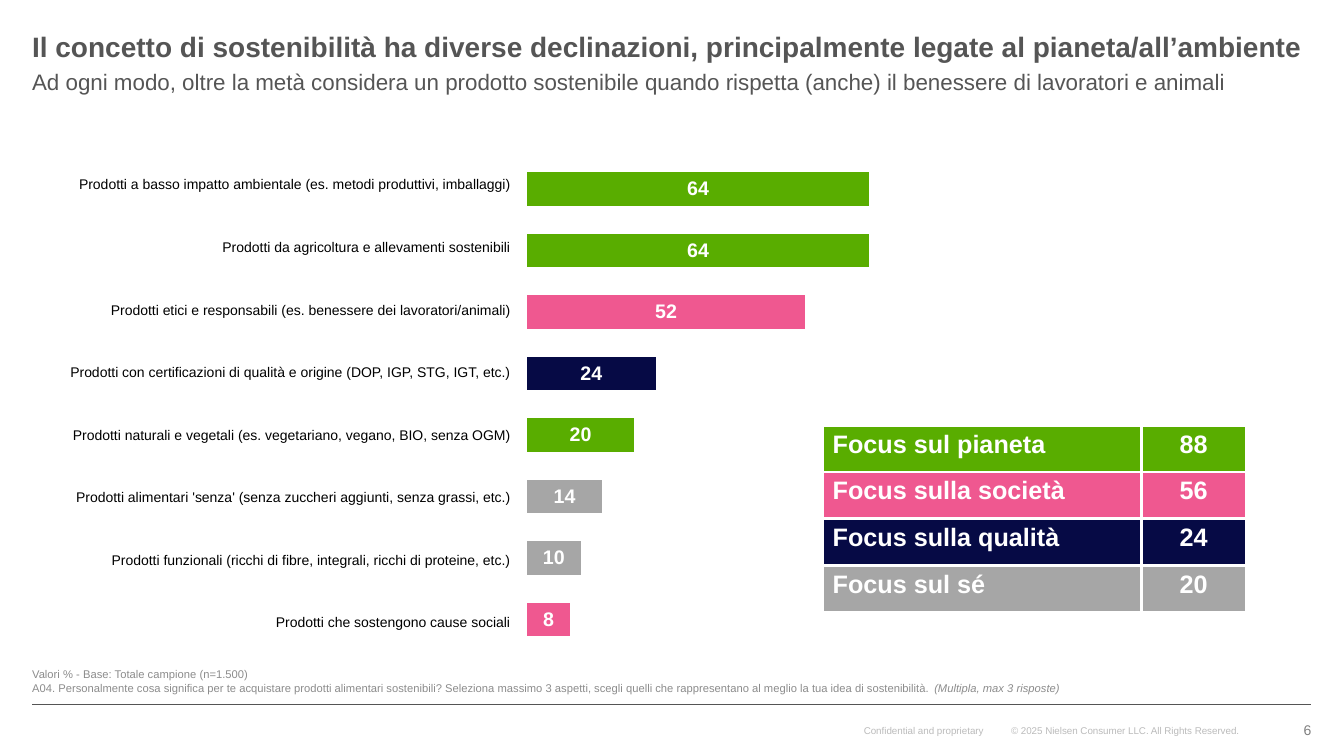
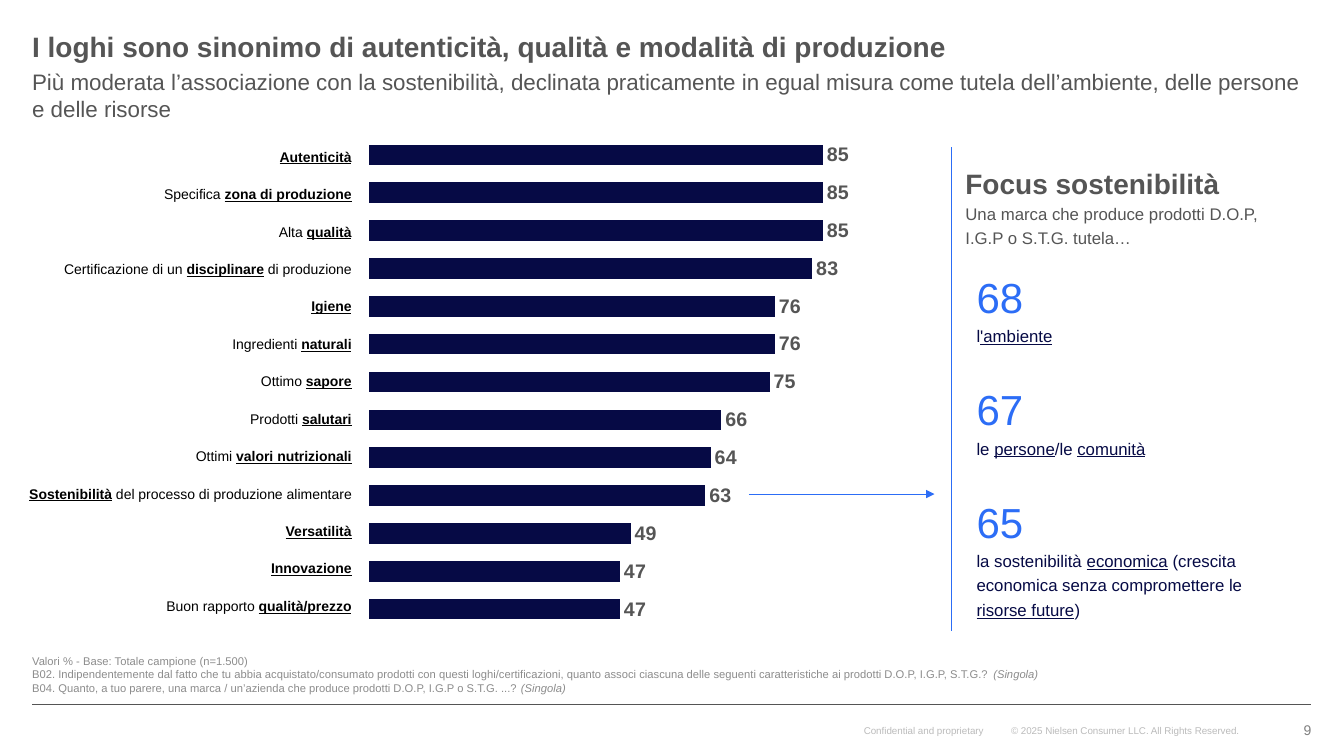
from dataclasses import dataclass
from typing import Sequence

from lxml.etree import SubElement
from pptx import Presentation
from pptx.chart.data import CategoryChartData
from pptx.dml.color import RGBColor
from pptx.enum.chart import XL_CHART_TYPE as ChartType, XL_LABEL_POSITION as LabelPosition
from pptx.enum.text import MSO_ANCHOR as Anchor, PP_ALIGN as Align
from pptx.oxml.ns import qn
from pptx.util import Cm, Pt

FONT = "Arial"
WHITE = RGBColor(0xFF, 0xFF, 0xFF)
BLACK = RGBColor(0x00, 0x00, 0x00)
DARK_GREY = RGBColor(0x55, 0x55, 0x55)
NUMBER_GREY = RGBColor(0x80, 0x80, 0x80)
NOTE_GREY = RGBColor(0x8C, 0x8C, 0x8C)
LEGAL_GREY = RGBColor(0xBB, 0xBB, 0xBB)
GREEN = RGBColor(0x59, 0xAD, 0x00)
PINK = RGBColor(0xEF, 0x58, 0x90)
NAVY = RGBColor(0x06, 0x0A, 0x45)
GREY = RGBColor(0xA6, 0xA6, 0xA6)
BLUE = RGBColor(0x2C, 0x6D, 0xF6)

LEFT, WIDTH = 0.81, 32.24
RULE_Y = 17.75
BASE_NOTE = "Valori % - Base: Totale campione (n=1.500)"


@dataclass(frozen=True)
class Area:
    """A rectangle in centimetres."""
    left: float
    top: float
    width: float
    height: float

    def lengths(self) -> tuple[Cm, Cm, Cm, Cm]:
        return Cm(self.left), Cm(self.top), Cm(self.width), Cm(self.height)


@dataclass(frozen=True)
class Line:
    """A paragraph; parts between bars get the font attributes in marks."""
    text: str
    size: float
    color: RGBColor
    bold: bool = False
    marks: tuple[str, ...] = ()
    align: Align = Align.LEFT
    spacing: float = 1.0


@dataclass(frozen=True)
class Bar:
    label: str
    value: int
    color: RGBColor = NAVY


@dataclass(frozen=True)
class Figure:
    value: str
    meaning: str


IMPACT_BARS = [
    Bar("Prodotti a basso impatto ambientale (es. metodi produttivi, imballaggi)", 64, GREEN),
    Bar("Prodotti da agricoltura e allevamenti sostenibili", 64, GREEN),
    Bar("Prodotti etici e responsabili (es. benessere dei lavoratori/animali)", 52, PINK),
    Bar("Prodotti con certificazioni di qualità e origine (DOP, IGP, STG, IGT, etc.)", 24),
    Bar("Prodotti naturali e vegetali (es. vegetariano, vegano, BIO, senza OGM)", 20, GREEN),
    Bar("Prodotti alimentari 'senza' (senza zuccheri aggiunti, senza grassi, etc.)", 14, GREY),
    Bar("Prodotti funzionali (ricchi di fibre, integrali, ricchi di proteine, etc.)", 10, GREY),
    Bar("Prodotti che sostengono cause sociali", 8, PINK),
]
FOCUS_ROWS = [
    Bar("Focus sul pianeta", 88, GREEN),
    Bar("Focus sulla società", 56, PINK),
    Bar("Focus sulla qualità", 24),
    Bar("Focus sul sé", 20, GREY),
]
LOGO_BARS = [
    Bar("|Autenticità|", 85),
    Bar("Specifica |zona di produzione|", 85),
    Bar("Alta |qualità|", 85),
    Bar("Certificazione di un |disciplinare| di produzione", 83),
    Bar("|Igiene|", 76),
    Bar("Ingredienti |naturali|", 76),
    Bar("Ottimo |sapore|", 75),
    Bar("Prodotti |salutari|", 66),
    Bar("Ottimi |valori nutrizionali|", 64),
    Bar("|Sostenibilità| del processo di produzione alimentare", 63),
    Bar("|Versatilità|", 49),
    Bar("|Innovazione|", 47),
    Bar("Buon rapporto |qualità/prezzo|", 47),
]
FIGURES = [
    Figure("68", "l|'ambiente|"),
    Figure("67", "le |persone|/le |comunità|"),
    Figure("65", "la sostenibilità |economica| (crescita economica senza "
                 "compromettere le |risorse future|)"),
]


def write(frame, lines: Sequence[Line]) -> None:
    for index, line in enumerate(lines):
        para = frame.paragraphs[0] if index == 0 else frame.add_paragraph()
        para.alignment = line.align
        para.line_spacing = line.spacing
        for position, part in enumerate(line.text.split("|")):
            if not part:
                continue
            span = para.add_run()
            span.text = part
            span.font.name = FONT
            span.font.size = Pt(line.size)
            span.font.bold = line.bold
            span.font.color.rgb = line.color
            if position % 2:
                for mark in line.marks:
                    setattr(span.font, mark, True)


def set_margins(target, left: float, top: float, right: float, bottom: float) -> None:
    target.margin_left, target.margin_right = Cm(left), Cm(right)
    target.margin_top, target.margin_bottom = Cm(top), Cm(bottom)


def add_text(page, area: Area, lines: Sequence[Line], side: float = 0, edge: float = 0,
             anchor: Anchor = Anchor.TOP) -> None:
    frame = page.shapes.add_textbox(*area.lengths()).text_frame
    frame.word_wrap = True
    frame.vertical_anchor = anchor
    set_margins(frame, side, edge, side, edge)
    write(frame, lines)


def add_line(page, start: tuple[float, float], end: tuple[float, float], color: RGBColor,
             width: float, arrow: bool = False) -> None:
    connector = page.shapes.add_connector(1, *map(Cm, start + end))
    connector.line.color.rgb = color
    connector.line.width = Pt(width)
    properties = connector._element.spPr
    if arrow:
        SubElement(properties.find(qn("a:ln")), qn("a:tailEnd"), type="triangle")
    SubElement(properties, qn("a:effectLst"))


def add_page(deck, number: int, title: str, subtitle: str, notes: Sequence[str]):
    """Adds a slide with heading, notes and footer."""
    page = deck.slides.add_slide(deck.slide_layouts[6])
    add_text(page, Area(25.48, 18.14, 6.3, 0.56),
             [Line("© 2025 Nielsen Consumer LLC. All Rights Reserved.", 7, LEGAL_GREY)], edge=0.13)
    add_text(page, Area(21.77, 18.26, 3.5, 0.3),
             [Line("Confidential and proprietary", 7, LEGAL_GREY)])
    add_line(page, (LEFT, RULE_Y), (LEFT + WIDTH, RULE_Y), DARK_GREY, 1)
    add_text(page, Area(LEFT, 0.84, WIDTH, 0.74),
             [Line(title, 20, DARK_GREY, bold=True, spacing=0.9)])
    add_text(page, Area(31.93, 18.01, 1.12, 0.79),
             [Line(str(number), 10, NUMBER_GREY, align=Align.RIGHT)], anchor=Anchor.MIDDLE)
    add_text(page, Area(LEFT, 1.6, WIDTH, 1.22), [Line(subtitle, 16, DARK_GREY)], edge=0.13)
    add_text(page, Area(LEFT, 16.3, WIDTH, 1.2),
             [Line(note, 8, NOTE_GREY, marks=("italic",)) for note in (BASE_NOTE, *notes)],
             anchor=Anchor.BOTTOM)
    return page


def fix_plot_area(chart) -> None:
    """Gives the inner plot area a fixed place in the chart."""
    plot_area = chart._chartSpace.chart.plotArea
    for old_layout in plot_area.findall(qn("c:layout")):
        plot_area.remove(old_layout)
    layout = SubElement(plot_area, qn("c:layout"))
    plot_area.insert(0, layout)
    manual = SubElement(layout, qn("c:manualLayout"))
    settings = {"layoutTarget": "inner", "xMode": "edge", "yMode": "edge",
                "x": "0.258", "y": "0.01", "w": "0.742", "h": "0.983"}
    for name, value in settings.items():
        SubElement(manual, qn(f"c:{name}"), val=value)


def add_bars(page, left: float, top: float, bars: Sequence[Bar], kind: ChartType,
             label_color: RGBColor, label_position: LabelPosition) -> None:
    data = CategoryChartData(number_format="0")
    data.categories = [str(index + 1) for index in range(len(bars))]
    data.add_series("Series 1", [bar.value for bar in bars])
    area = Area(left, top, 18.14, 12.62)
    chart = page.shapes.add_chart(kind, *area.lengths(), data).chart
    chart.has_legend = chart.has_title = False
    chart.font.name, chart.font.size = FONT, Pt(10)
    chart.font.color.rgb = DARK_GREY
    chart.category_axis.reverse_order = True
    chart.value_axis.minimum_scale, chart.value_axis.maximum_scale = 0, 100
    chart.value_axis.has_major_gridlines = False
    chart.category_axis.visible = chart.value_axis.visible = False
    fix_plot_area(chart)

    plot = chart.plots[0]
    plot.gap_width = 85
    plot.vary_by_categories = False
    series = plot.series[0]
    series.invert_if_negative = False
    series.format.fill.solid()
    series.format.fill.fore_color.rgb = NAVY
    for index, bar in enumerate(bars):
        if bar.color != NAVY:
            fill = series.points[index].format.fill
            fill.solid()
            fill.fore_color.rgb = bar.color

    plot.has_data_labels = True
    labels = plot.data_labels
    labels.show_value = True
    labels.number_format, labels.number_format_is_linked = "0", False
    labels.position = label_position
    labels.font.name, labels.font.size, labels.font.bold = FONT, Pt(14), True
    labels.font.color.rgb = label_color


def add_plain_table(page, area: Area, rows: int, widths: Sequence[float]):
    table = page.shapes.add_table(rows, len(widths), *area.lengths()).table
    table.first_row = table.horz_banding = False
    for column, width in zip(table.columns, widths):
        column.width = Cm(width)
    for row in table.rows:
        row.height = Cm(area.height / rows)
    return table


def add_bar_labels(page, area: Area, bars: Sequence[Bar]) -> None:
    table = add_plain_table(page, area, len(bars), [area.width])
    for cell, bar in zip(table.iter_cells(), bars):
        cell.fill.background()
        cell.vertical_anchor = Anchor.MIDDLE
        set_margins(cell, 0.03, 0.03, 0.03, 0)
        write(cell.text_frame, [Line(bar.label, 10, BLACK, marks=("bold", "underline"),
                                     align=Align.RIGHT)])


def add_cell_borders(cell, color: RGBColor, width: float) -> None:
    properties = cell._tc.get_or_add_tcPr()
    for side in ("lnL", "lnR", "lnT", "lnB"):
        border = SubElement(properties, qn(f"a:{side}"), w=str(Pt(width)))
        SubElement(SubElement(border, qn("a:solidFill")), qn("a:srgbClr"), val=str(color))


def add_focus_table(page, rows: Sequence[Bar]) -> None:
    table = add_plain_table(page, Area(20.73, 10.72, 10.67, 4.7), len(rows), [8.03, 2.64])
    for index, row in enumerate(rows):
        for column, (text, align) in enumerate([(row.label, Align.LEFT),
                                                (str(row.value), Align.CENTER)]):
            cell = table.cell(index, column)
            add_cell_borders(cell, WHITE, 2.25)
            cell.fill.solid()
            cell.fill.fore_color.rgb = row.color
            write(cell.text_frame, [Line(text, 18, WHITE, bold=True, align=align)])


def add_concept_page(deck) -> None:
    page = add_page(
        deck, 6,
        "Il concetto di sostenibilità ha diverse declinazioni, principalmente legate al "
        "pianeta/all’ambiente",
        "Ad ogni modo, oltre la metà considera un prodotto sostenibile quando rispetta (anche) "
        "il benessere di lavoratori e animali",
        ["A04. Personalmente cosa significa per te acquistare prodotti alimentari sostenibili? "
         "Seleziona massimo 3 aspetti, scegli quelli che rappresentano al meglio la tua idea di "
         "sostenibilità. |(Multipla, max 3 risposte)|"])
    add_bars(page, 8.61, 3.86, IMPACT_BARS, ChartType.BAR_STACKED, WHITE, LabelPosition.CENTER)
    add_bar_labels(page, Area(1.4, 3.86, 11.48, 12.62), IMPACT_BARS)
    add_focus_table(page, FOCUS_ROWS)


def add_logo_page(deck) -> None:
    page = add_page(
        deck, 9,
        "I loghi sono sinonimo di autenticità, qualità e modalità di produzione",
        "Più moderata l’associazione con la sostenibilità, declinata praticamente in egual "
        "misura come tutela dell’ambiente, delle persone e delle risorse",
        ["B02. Indipendentemente dal fatto che tu abbia acquistato/consumato prodotti con questi "
         "loghi/certificazioni, quanto associ ciascuna delle seguenti caratteristiche ai prodotti "
         "D.O.P, I.G.P, S.T.G.? |(Singola)|",
         "B04. Quanto, a tuo parere, una marca / un’azienda che produce prodotti D.O.P, I.G.P o "
         "S.T.G. ...? |(Singola)|"])
    add_bars(page, 4.62, 3.3, LOGO_BARS, ChartType.BAR_CLUSTERED, DARK_GREY,
             LabelPosition.OUTSIDE_END)
    add_bar_labels(page, Area(0.48, 3.48, 8.41, 12.27), LOGO_BARS)
    add_line(page, (23.98, 3.71), (23.98, 15.9), BLUE, 0.75)
    add_line(page, (18.87, 12.45), (23.55, 12.45), BLUE, 0.75, arrow=True)
    add_text(page, Area(24.08, 3.89, 8.13, 2.46), [
        Line("Focus sostenibilità", 20, DARK_GREY, bold=True, spacing=1.2),
        Line("Una marca che produce prodotti D.O.P, I.G.P o S.T.G. tutela…", 12, DARK_GREY,
             spacing=1.2)], side=0.25, edge=0.13)
    for index, figure in enumerate(FIGURES):
        add_text(page, Area(24.36, 6.45 + 2.84 * index, 8.13, 2.36), [
            Line(figure.value, 30, BLUE, spacing=1.2),
            Line(figure.meaning, 12, NAVY, marks=("underline",), spacing=1.2)],
            side=0.25, edge=0.13)


def main() -> None:
    deck = Presentation()
    deck.slide_width, deck.slide_height = Cm(33.87), Cm(19.05)
    add_concept_page(deck)
    add_logo_page(deck)
    deck.save("out.pptx")


if __name__ == "__main__":
    main()
